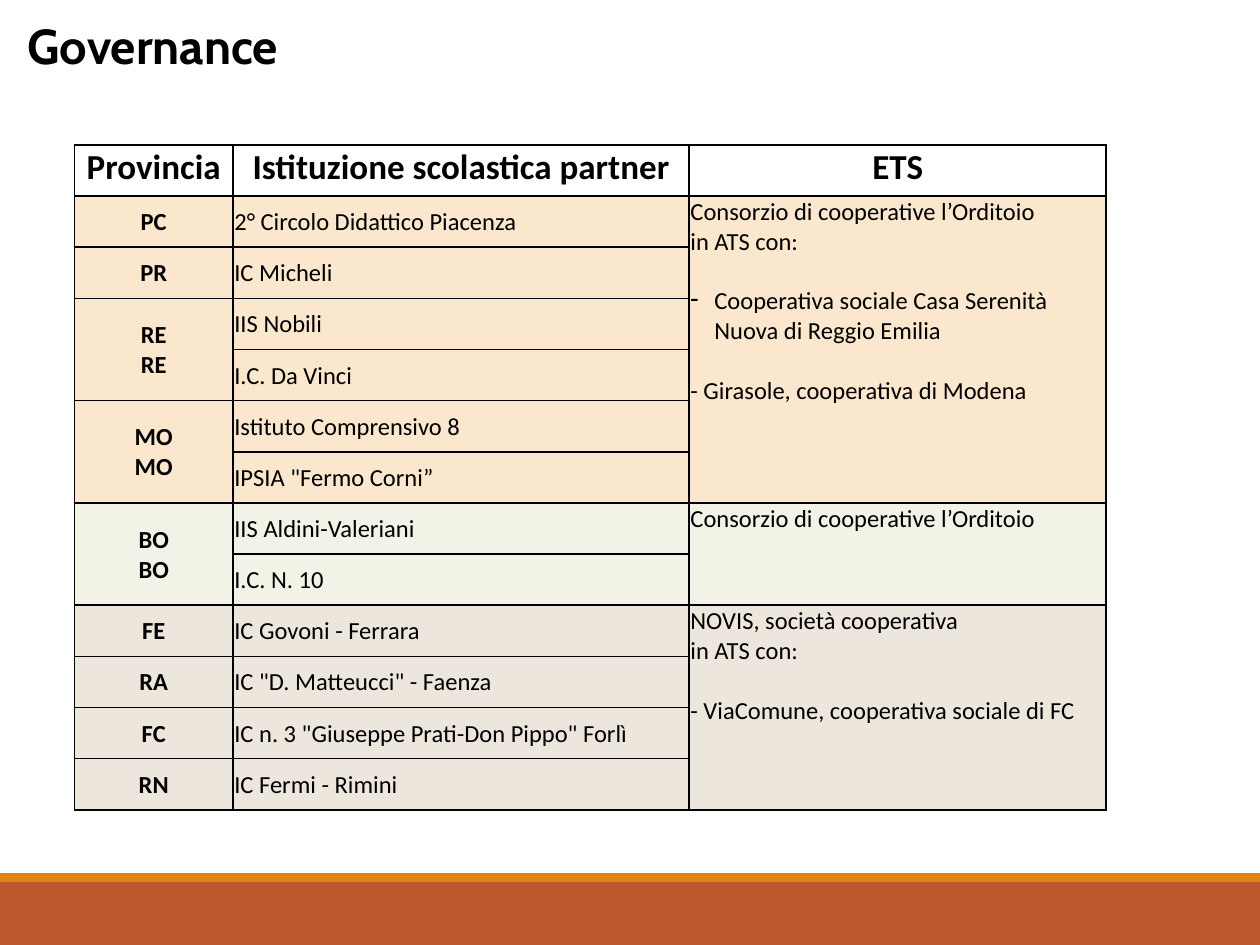
from lxml.etree import SubElement
from pptx import Presentation
from pptx.dml.color import RGBColor
from pptx.enum.shapes import MSO_SHAPE
from pptx.enum.text import MSO_ANCHOR, PP_ALIGN
from pptx.oxml.ns import qn
from pptx.util import Inches, Pt

COLORS = {
    "text": "000000",
    "border": "000000",
    "header": "FFFFFF",
    "west": "FBE6CE",
    "bologna": "F3F2E6",
    "east": "ECE6DD",
    "footer": "BD582C",
    "stripe": "E48312",
}
HEADINGS = ["Provincia", "Istituzione scolastica partner", "ETS"]
COLUMN_WIDTHS = [1.26, 3.62, 3.31]
TABLE_HEIGHT = 5.28
AREAS = [
    {
        "color": "west",
        "provinces": [
            ("PC", ["2° Circolo Didattico Piacenza"]),
            ("PR", ["IC Micheli"]),
            ("RE", ["IIS Nobili", "I.C. Da Vinci"]),
            ("MO", ["Istituto Comprensivo 8", 'IPSIA "Fermo Corni”']),
        ],
        "partners": [
            ("Consorzio di cooperative l’Orditoio", "plain"),
            ("in ATS con:", "plain"),
            ("Cooperativa sociale Casa Serenità Nuova di Reggio Emilia", "bullet"),
            ("- Girasole, cooperativa di Modena", "spaced"),
        ],
    },
    {
        "color": "bologna",
        "provinces": [("BO", ["IIS Aldini-Valeriani", "I.C. N. 10"])],
        "partners": [("Consorzio di cooperative l’Orditoio", "plain")],
    },
    {
        "color": "east",
        "provinces": [
            ("FE", ["IC Govoni - Ferrara"]),
            ("RA", ['IC "D. Matteucci" - Faenza']),
            ("FC", ['IC n. 3 "Giuseppe Prati-Don Pippo" Forlì']),
            ("RN", ["IC Fermi - Rimini"]),
        ],
        "partners": [
            ("NOVIS, società cooperativa", "plain"),
            ("in ATS con:", "plain"),
            ("- ViaComune, cooperativa sociale di FC", "spaced"),
        ],
    },
]


def rgb(name):
    """Return the named colour."""
    return RGBColor.from_string(COLORS[name])


def add_text(paragraph, text, size, bold=False, font="Calibri"):
    """Add one formatted run to a paragraph."""
    run = paragraph.add_run()
    run.text = text
    run.font.name = font
    run.font.size = Pt(size)
    run.font.bold = bold
    run.font.color.rgb = rgb("text")


def add_title(slide, text):
    """Place and fill the title placeholder."""
    title = slide.shapes.title
    title.left, title.top = Inches(0.12), Inches(0.07)
    title.width, title.height = Inches(7.72), Inches(0.57)
    title.text_frame.vertical_anchor = MSO_ANCHOR.MIDDLE
    paragraph = title.text_frame.paragraphs[0]
    paragraph.alignment = PP_ALIGN.LEFT
    add_text(paragraph, text, 28, True, "Cabin")


def add_band(slide, top, height, color):
    """Add a full-width band at the foot of the slide."""
    band = slide.shapes.add_shape(
        MSO_SHAPE.RECTANGLE, 0, Inches(top), Inches(10), Inches(height)
    )
    band.shadow.inherit = False
    band.fill.solid()
    band.fill.fore_color.rgb = rgb(color)
    band.line.fill.background()


def style_cell(cell, color):
    """Give a cell its borders, margins and fill."""
    properties = cell._tc.get_or_add_tcPr()
    for side in ("lnL", "lnR", "lnT", "lnB"):
        border = SubElement(properties, qn(f"a:{side}"), w=str(Pt(1)))
        fill = SubElement(border, qn("a:solidFill"))
        SubElement(fill, qn("a:srgbClr"), val=COLORS["border"])
    cell.margin_left = cell.margin_right = cell.margin_top = Inches(0.01)
    cell.margin_bottom = 0
    cell.fill.solid()
    cell.fill.fore_color.rgb = rgb(color)


def add_dash_bullet(paragraph):
    """Give a paragraph a hanging dash bullet."""
    properties = paragraph._p.get_or_add_pPr()
    properties.set("marL", str(Inches(0.19)))
    properties.set("indent", str(-Inches(0.19)))
    SubElement(properties, qn("a:buChar"), char="-")


def write_lines(cell, lines, size=14, bold=False, centered=False, middle=True):
    """Write (text, kind) lines into a cell, one paragraph each."""
    cell.vertical_anchor = MSO_ANCHOR.MIDDLE if middle else MSO_ANCHOR.TOP
    frame = cell.text_frame
    for index, (text, kind) in enumerate(lines):
        paragraph = frame.add_paragraph() if index else frame.paragraphs[0]
        paragraph.alignment = PP_ALIGN.CENTER if centered else PP_ALIGN.LEFT
        if kind != "plain":
            paragraph.space_before = Pt(17)
        if kind == "bullet":
            add_dash_bullet(paragraph)
        add_text(paragraph, text, size, bold)


def merge_down(table, row, column, count):
    """Merge count cells downwards and return the top one."""
    top_cell = table.cell(row, column)
    if count > 1:
        top_cell.merge(table.cell(row + count - 1, column))
    return top_cell


def fill_area(table, first_row, area):
    """Fill the rows of one area and return the row after it."""
    row = first_row
    for province, schools in area["provinces"]:
        for offset, school in enumerate(schools):
            for column in range(len(HEADINGS)):
                style_cell(table.cell(row + offset, column), area["color"])
            write_lines(table.cell(row + offset, 1), [(school, "plain")])
        province_cell = merge_down(table, row, 0, len(schools))
        write_lines(
            province_cell, [(province, "plain")] * len(schools), bold=True, centered=True
        )
        row += len(schools)
    partner_cell = merge_down(table, first_row, 2, row - first_row)
    write_lines(partner_cell, area["partners"], middle=False)
    return row


def add_governance_table(slide):
    """Add the table of provinces, schools and partners."""
    school_count = sum(
        len(schools) for area in AREAS for _, schools in area["provinces"]
    )
    table = slide.shapes.add_table(
        school_count + 1, len(HEADINGS), Inches(0.59), Inches(1.15),
        Inches(sum(COLUMN_WIDTHS)), Inches(TABLE_HEIGHT),
    ).table
    for column, width in zip(table.columns, COLUMN_WIDTHS):
        column.width = Inches(width)
    for table_row in table.rows:
        table_row.height = Inches(TABLE_HEIGHT / (school_count + 1))
    for column, heading in enumerate(HEADINGS):
        cell = table.cell(0, column)
        style_cell(cell, "header")
        write_lines(cell, [(heading, "plain")], 20, True, True, False)
    row = 1
    for area in AREAS:
        row = fill_area(table, row, area)


def main():
    """Build and save the governance slide."""
    presentation = Presentation()
    presentation.slide_width, presentation.slide_height = Inches(10), Inches(7.5)
    slide = presentation.slides.add_slide(presentation.slide_layouts[5])
    add_band(slide, 7, 0.5, "footer")
    add_band(slide, 6.93, 0.07, "stripe")
    add_title(slide, "Governance")
    add_governance_table(slide)
    presentation.save("out.pptx")


if __name__ == "__main__":
    main()
